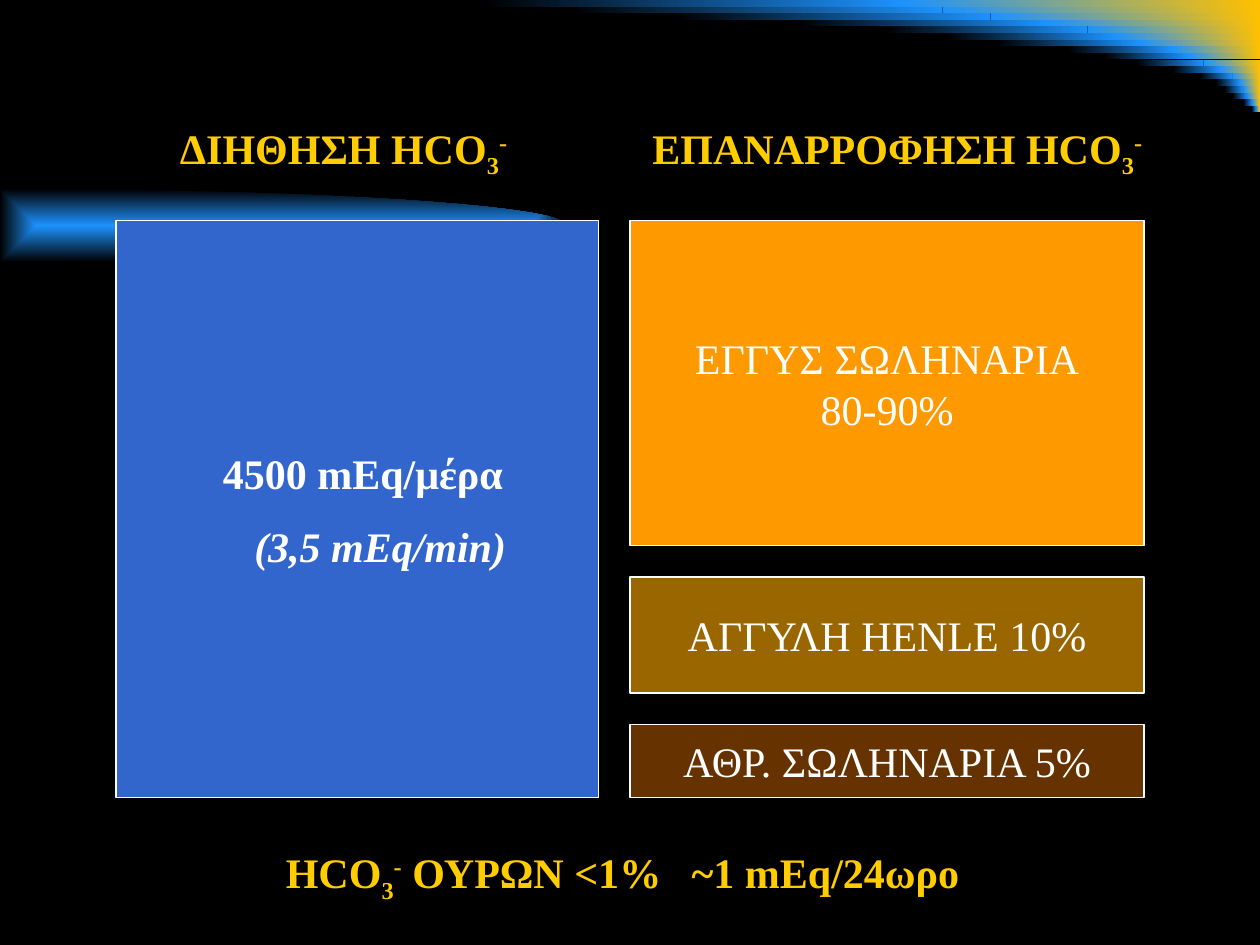
"""Build the slide on bicarbonate filtration and reabsorption."""
import math

import pptx
import pptx.dml.color
import pptx.enum.shapes
import pptx.enum.text
import pptx.oxml
import pptx.util

Inches = pptx.util.Inches
RGB = pptx.dml.color.RGBColor.from_string
RECT = pptx.enum.shapes.MSO_SHAPE.RECTANGLE
ALIGN = pptx.enum.text.PP_ALIGN
NS = "http://schemas.openxmlformats.org/drawingml/2006/main"
COLORS = {
    "black": "000000", "white": "FFFFFF", "sky": "1D92FD", "gold": "FFC000",
    "yellow": "FFCC00", "blue": "3366CC", "orange": "FF9900",
    "olive": "996600", "brown": "663300",
}


def add_gradient(sp, start, end):
    sp.shadow.inherit = False
    sp.line.fill.background()
    sp.fill.gradient()
    sp.fill.gradient_angle = 0
    for stop, name in zip(sp.fill.gradient_stops, (start, end)):
        stop.color.rgb = RGB(COLORS[name])


def add_run(p, text, color, bold=False, italic=False, baseline=0):
    r = p.add_run()
    r.text = text
    r.font.name = "Times New Roman"
    r.font.size = pptx.util.Pt(24)
    r.font.bold = bold
    r.font.italic = italic
    r.font.color.rgb = RGB(COLORS[color])
    if baseline:
        r.font._element.set("baseline", str(baseline * 1000))


prs = pptx.Presentation()
prs.slide_width = Inches(10)
prs.slide_height = Inches(7.5)
s = prs.slides.add_slide(prs.slide_layouts[6])
s.background.fill.solid()
s.background.fill.fore_color.rgb = RGB(COLORS["black"])

splits = [7.16, 7.48, 7.86, 8.31, 8.63, 8.85, 9.04, 9.3, 9.43,
          9.55, 9.68, 9.78, 9.84, 9.87, 9.9, 9.94, 9.97]
strip_h = 0.84 / 16
for row, split in enumerate(splits):
    gold_w = 10 - split
    sky_w = gold_w * 1.17
    for x, w, start, end in [(split, gold_w, "sky", "gold"),
                             (split - sky_w, sky_w, "black", "sky")]:
        sp = s.shapes.add_shape(RECT, Inches(x), Inches(row * strip_h),
                                Inches(w), Inches(strip_h))
        add_gradient(sp, start, end)

arc = [(Inches(4.5 * math.sin(math.pi * i / 60)),
        Inches(1.79 - 0.29 * math.cos(math.pi * i / 60))) for i in range(61)]
fb = s.shapes.build_freeform(*arc[0])
fb.add_line_segments(arc[1:], close=True)
sp = fb.convert_to_shape()
add_gradient(sp, "sky", "black")
lin = next(sp._element.iter(f"{{{NS}}}lin"))
lin.getparent().replace(lin, pptx.oxml.parse_xml(
    f'<a:path xmlns:a="{NS}" path="shape">'
    '<a:fillToRect l="50000" t="50000" r="50000" b="50000"/></a:path>'))

boxes = [
    (0.92, 1.75, 3.83, 4.58, "blue", []),
    (5, 1.75, 4.08, 2.58, "orange", ["ΕΓΓΥΣ ΣΩΛΗΝΑΡΙΑ", "80-90%"]),
    (5, 4.58, 4.08, 0.92, "olive", ["ΑΓΓΥΛΗ HENLE 10%"]),
    (5, 5.75, 4.08, 0.58, "brown", ["ΑΘΡ. ΣΩΛΗΝΑΡΙΑ 5%"]),
]
for x, y, w, h, color, lines in boxes:
    sp = s.shapes.add_shape(RECT, Inches(x), Inches(y), Inches(w), Inches(h))
    sp.shadow.inherit = False
    sp.fill.solid()
    sp.fill.fore_color.rgb = RGB(COLORS[color])
    sp.line.color.rgb = RGB(COLORS["white"])
    sp.line.width = pptx.util.Pt(0.75)
    tf = sp.text_frame
    tf.word_wrap = False
    tf.vertical_anchor = pptx.enum.text.MSO_ANCHOR.MIDDLE
    for i, line in enumerate(lines):
        p = tf.add_paragraph() if i else tf.paragraphs[0]
        p.alignment = ALIGN.CENTER
        add_run(p, line, "white")

ion = [("3", -25), ("-", 30)]
labels = [
    (1.33, 0.92, 2.9, "yellow", False, [("ΔΙΗΘΗΣΗ HCO", 0), *ion]),
    (5.08, 0.92, 4.19, "yellow", False, [("ΕΠΑΝΑΡΡΟΦΗΣΗ HCO", 0), *ion]),
    (1.67, 3.5, 2.43, "white", False, [("4500 mEq/μέρα", 0)]),
    (1.92, 4.08, 2.2, "white", True, [("(3,5 mEq/min)", 0)]),
    (2.17, 6.67, 5.75, "yellow", False,
     [("HCO", 0), *ion, (" ΟΥΡΩΝ <1%\t~1 mEq/24ωρο", 0)]),
]
for x, y, w, color, italic, runs in labels:
    tf = s.shapes.add_textbox(Inches(x), Inches(y), Inches(w), Inches(0.5)).text_frame
    tf.word_wrap = False
    tf.auto_size = pptx.enum.text.MSO_AUTO_SIZE.SHAPE_TO_FIT_TEXT
    p = tf.paragraphs[0]
    for text, baseline in runs:
        add_run(p, text, color, True, italic, baseline)

tf.word_wrap = True
p._p.get_or_add_pPr().append(pptx.oxml.parse_xml(
    f'<a:tabLst xmlns:a="{NS}"><a:tab pos="{Inches(3.22)}" algn="l"/></a:tabLst>'))

prs.save("out.pptx")
